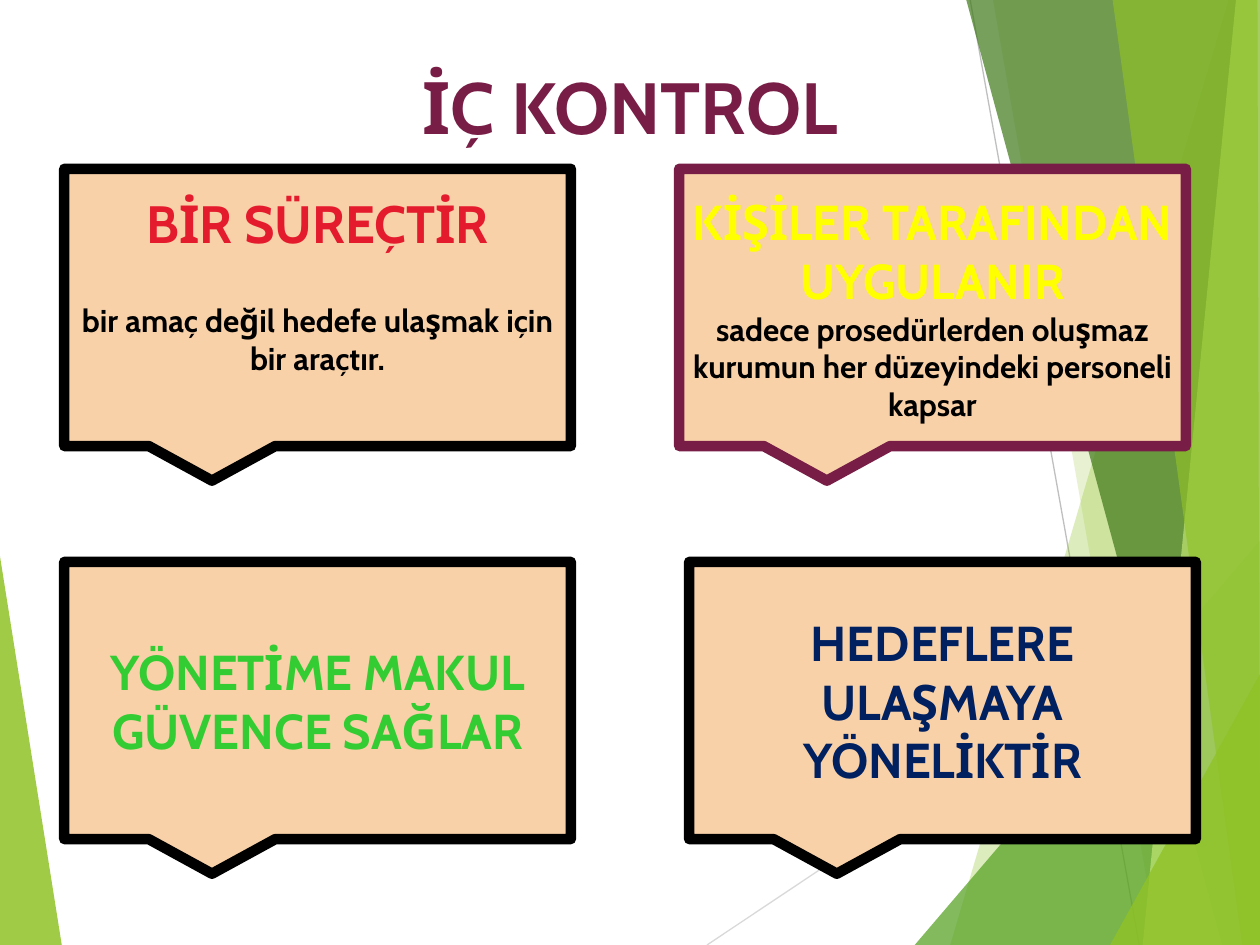
from lxml import etree
from pptx import Presentation
from pptx import util as u
from pptx.dml.color import RGBColor
from pptx.enum import shapes, text
from pptx.oxml.ns import qn

Pt = u.Pt
WIDTH, HEIGHT = 720, 540
FONT = "Cabin"
BLACK, PLUM, PEACH = "000000", "781E46", "F9D1A9"
CARD_W, CARD_H = 289.5, 158.4


def color(hex_string):
    return RGBColor.from_string(hex_string)


def add_facet(slide, points, fill, opacity):
    """Borderless translucent polygon."""
    start, *rest = [(Pt(x), Pt(y)) for x, y in points]
    builder = slide.shapes.build_freeform(*start)
    builder.add_line_segments(rest, close=True)
    facet = builder.convert_to_shape()
    facet.shadow.inherit = False
    facet.line.fill.background()
    facet.fill.solid()
    facet.fill.fore_color.rgb = color(fill)
    tint = facet.fill._xPr.find(qn("a:solidFill"))[0]
    etree.SubElement(tint, qn("a:alpha"), val=str(opacity * 1000))


def add_hairline(slide, x1, y1, x2, y2, stroke):
    hairline = slide.shapes.add_connector(
        shapes.MSO_CONNECTOR.STRAIGHT, Pt(x1), Pt(y1), Pt(x2), Pt(y2))
    hairline.line.color.rgb = color(stroke)
    hairline.line.width = Pt(0.75)
    etree.SubElement(hairline._element.spPr, qn("a:effectLst"))


def write(frame, words, size, fill, before=0, first=False):
    """Add one bold centred paragraph."""
    paragraph = frame.paragraphs[0] if first else frame.add_paragraph()
    paragraph.alignment = text.PP_ALIGN.CENTER
    paragraph.space_before = Pt(before)
    run = paragraph.add_run()
    run.text = words
    run.font.name = FONT
    run.font.size = Pt(size)
    run.font.bold = True
    run.font.color.rgb = color(fill)


def add_backdrop(slide, right, bottom):
    """Green facets and thin lines along the slide edges."""
    add_facet(slide, [(0, 318), (35.3, bottom), (0, bottom)], "90C226", 85)
    add_hairline(slide, 404, bottom, right, 329, "D9D9D9")
    add_hairline(slide, 554.4, 0, 651, bottom, "BFBFBF")
    # top left x, bottom left x, top right x, fill, opacity
    bands = [
        (702, 543, right, "90C226", 30),
        (567.4, 661.7, right, "90C226", 20),
        (None, 522.7, 309, "54A021", 72),
        (552.2, 698.4, right, "3F7819", 70),
        (706.3, 653, right, "C0E474", 70),
        (635.8, 710, 718.6, "90C226", 65),
        (None, 634.3, 385.2, "90C226", 80),
    ]
    for top_left, bottom_left, reach, fill, opacity in bands:
        if top_left is None:  # corner triangle, reach is its top y
            points = [(bottom_left, bottom), (right, reach), (right, bottom)]
        else:
            points = [(top_left, 0), (bottom_left, bottom),
                      (right, bottom), (reach, 0)]
        add_facet(slide, points, fill, opacity)


def add_title(slide, left, top, width, height):
    title = slide.shapes.add_textbox(Pt(left), Pt(top), Pt(width), Pt(height))
    frame = title.text_frame
    frame.word_wrap = True
    frame.vertical_anchor = text.MSO_ANCHOR.MIDDLE
    write(frame, "İÇ KONTROL", 41.4, PLUM, first=True)


def add_card(slide, left, top, heading, size, fill,
             detail=None, border=BLACK, gap=0):
    """Callout with a heading and an optional detail below it."""
    card = slide.shapes.add_shape(
        shapes.MSO_SHAPE.RECTANGULAR_CALLOUT,
        Pt(left), Pt(top), Pt(CARD_W), Pt(CARD_H))
    card.shadow.inherit = False
    card.fill.solid()
    card.fill.fore_color.rgb = color(PEACH)
    card.line.color.rgb = color(border)
    card.line.width = Pt(6)
    etree.SubElement(card.line._get_or_add_ln(), qn("a:round"))
    frame = card.text_frame
    frame.word_wrap = True
    frame.vertical_anchor = text.MSO_ANCHOR.MIDDLE
    frame.margin_bottom = Pt(3.6 + gap)
    write(frame, heading, size, fill, first=True)
    if detail:
        write(frame, detail, 18, BLACK, before=gap)


def main():
    deck = Presentation()
    deck.slide_width, deck.slide_height = Pt(WIDTH), Pt(HEIGHT)
    slide = deck.slides.add_slide(deck.slide_layouts[6])

    add_backdrop(slide, WIDTH, HEIGHT)
    add_title(slide, 169.2, 31.7, 381.6, 57.6)

    # Four callouts in two rows
    left, upper, lower = 36.7, 96.5, 321.1
    add_card(slide, left, upper, "BİR SÜREÇTİR", 30, "E41A2D",
             detail="bir amaç değil hedefe ulaşmak için bir araçtır.", gap=26.7)
    add_card(slide, left, lower, "YÖNETİME MAKUL GÜVENCE SAĞLAR", 28, "33CC33")
    add_card(slide, 388.1, upper, "KİŞİLER TARAFINDAN UYGULANIR", 28, "FFFF00",
             detail="sadece prosedürlerden oluşmaz kurumun her düzeyindeki "
                    "personeli kapsar", border=PLUM)
    add_card(slide, 393.8, lower, "HEDEFLERE ULAŞMAYA YÖNELİKTİR", 28, "002060")

    deck.save("out.pptx")


if __name__ == "__main__":
    main()
